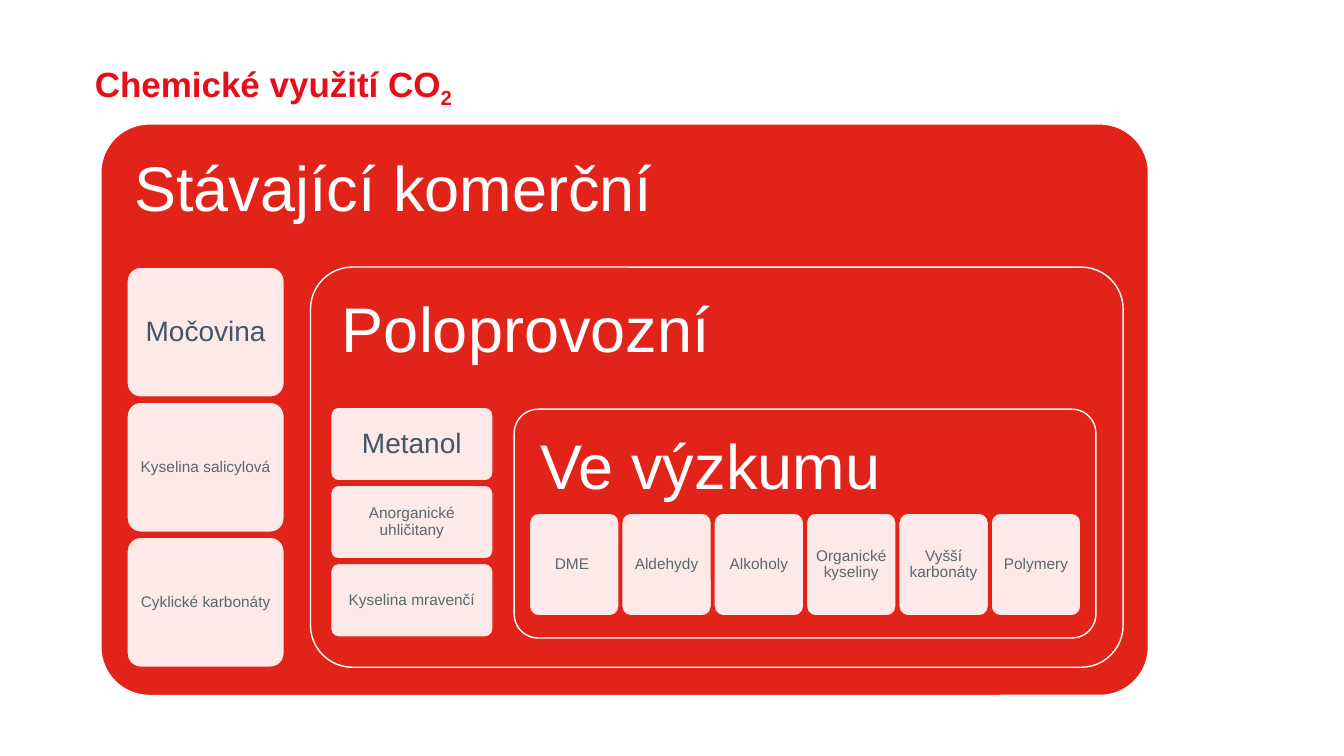
from dataclasses import dataclass

from lxml import etree
from pptx import Presentation, util as u
from pptx.dml import color
from pptx.enum import shapes, text
from pptx.oxml import ns

TITLE = [("Chemické využití CO", False), ("2", True)]

# Each stage: heading, frame (left, top, width, height), corner ratio,
# first tile (left, top, width, height), step to the next tile (x, y), tile labels
STAGES = [
    ("Stávající komerční", (1, 1.23, 10.39, 5.67), 0.085,
     (1.26, 2.65, 1.56, 1.29), (0, 1.34),
     ["Močovina", "Kyselina salicylová", "Cyklické karbonáty"]),
    ("Poloprovozní", (3.08, 2.65, 8.06, 3.97), 0.105,
     (3.28, 4.04, 1.61, 0.73), (0, 0.775),
     ["Metanol", "Anorganické uhličitany", "Kyselina mravenčí"]),
    ("Ve výzkumu", (5.1, 4.06, 5.77, 2.27), 0.105,
     (5.25, 5.09, 0.89, 1.02), (0.916, 0),
     ["DME ", "Aldehydy", "Alkoholy", "Organické kyseliny",
      "Vyšší karbonáty", "Polymery"]),
]
KEY_PRODUCTS = {"Močovina", "Metanol"}


@dataclass(frozen=True)
class Theme:
    font: str = "Arial"
    title: str = "E40F18"
    red: str = "E2231A"
    white: str = "FFFFFF"
    key: str = "44546A"
    label: str = "5C6670"
    title_size: int = 25
    heading_size: int = 45
    key_size: int = 20
    label_size: int = 11
    tile_opacity: int = 90
    tile_corner: float = 0.105


THEME = Theme()


def rgb(value):
    return color.RGBColor.from_string(value)


def add_run(paragraph, words, size, colour):
    run = paragraph.add_run()
    run.text = words
    run.font.name = THEME.font
    run.font.size = u.Pt(size)
    run.font.color.rgb = rgb(colour)
    return run


def add_box(slide, place, corner, fill, line, words, size, colour, margin, centred):
    shape = slide.shapes.add_shape(
        shapes.MSO_SHAPE.ROUNDED_RECTANGLE, *map(u.Inches, place))
    shape.adjustments[0] = corner
    shape.shadow.inherit = False
    shape.fill.solid()
    shape.fill.fore_color.rgb = rgb(fill)
    shape.line.color.rgb = rgb(line)
    shape.line.width = u.Pt(1)
    frame = shape.text_frame
    frame.word_wrap = True
    frame.margin_left = frame.margin_right = u.Inches(margin)
    frame.margin_top = frame.margin_bottom = u.Inches(margin)
    frame.vertical_anchor = text.MSO_ANCHOR.MIDDLE if centred else text.MSO_ANCHOR.TOP
    paragraph = frame.paragraphs[0]
    paragraph.alignment = text.PP_ALIGN.CENTER if centred else text.PP_ALIGN.LEFT
    paragraph.line_spacing = 0.9
    add_run(paragraph, words, size, colour)
    return shape


def add_tile(slide, place, words):
    if words in KEY_PRODUCTS:
        size, colour, margin = THEME.key_size, THEME.key, 0.08
    else:
        size, colour, margin = THEME.label_size, THEME.label, 0.05
    tile = add_box(slide, place, THEME.tile_corner, THEME.white, THEME.red,
                   words, size, colour, margin, True)
    fill_colour = tile._element.spPr.find(ns.qn("a:solidFill"))[0]
    etree.SubElement(fill_colour, ns.qn("a:alpha"), val=str(THEME.tile_opacity * 1000))


def add_title(slide):
    title = slide.shapes.title
    title.left, title.top, title.width, title.height = map(
        u.Inches, (0.84, 0.44, 12, 0.79))
    frame = title.text_frame
    frame.auto_size = text.MSO_AUTO_SIZE.NONE
    frame.vertical_anchor = text.MSO_ANCHOR.MIDDLE
    paragraph = frame.paragraphs[0]
    paragraph.alignment = text.PP_ALIGN.LEFT
    paragraph.line_spacing = 0.9
    for words, subscript in TITLE:
        run = add_run(paragraph, words, THEME.title_size, THEME.title)
        run.font.bold = True
        if subscript:
            run.font._element.set("baseline", "-25000")


def main():
    presentation = Presentation()
    presentation.slide_width = u.Inches(13.33)
    presentation.slide_height = u.Inches(7.5)
    slide = presentation.slides.add_slide(presentation.slide_layouts[5])
    add_title(slide)
    for heading, place, corner, first_tile, (step_x, step_y), labels in STAGES:
        add_box(slide, place, corner, THEME.red, THEME.white, heading,
                THEME.heading_size, THEME.white, 0.19, False)
        left, top, width, height = first_tile
        for index, label in enumerate(labels):
            add_tile(slide, (left + index * step_x, top + index * step_y,
                             width, height), label)
    presentation.save("out.pptx")


if __name__ == "__main__":
    main()
